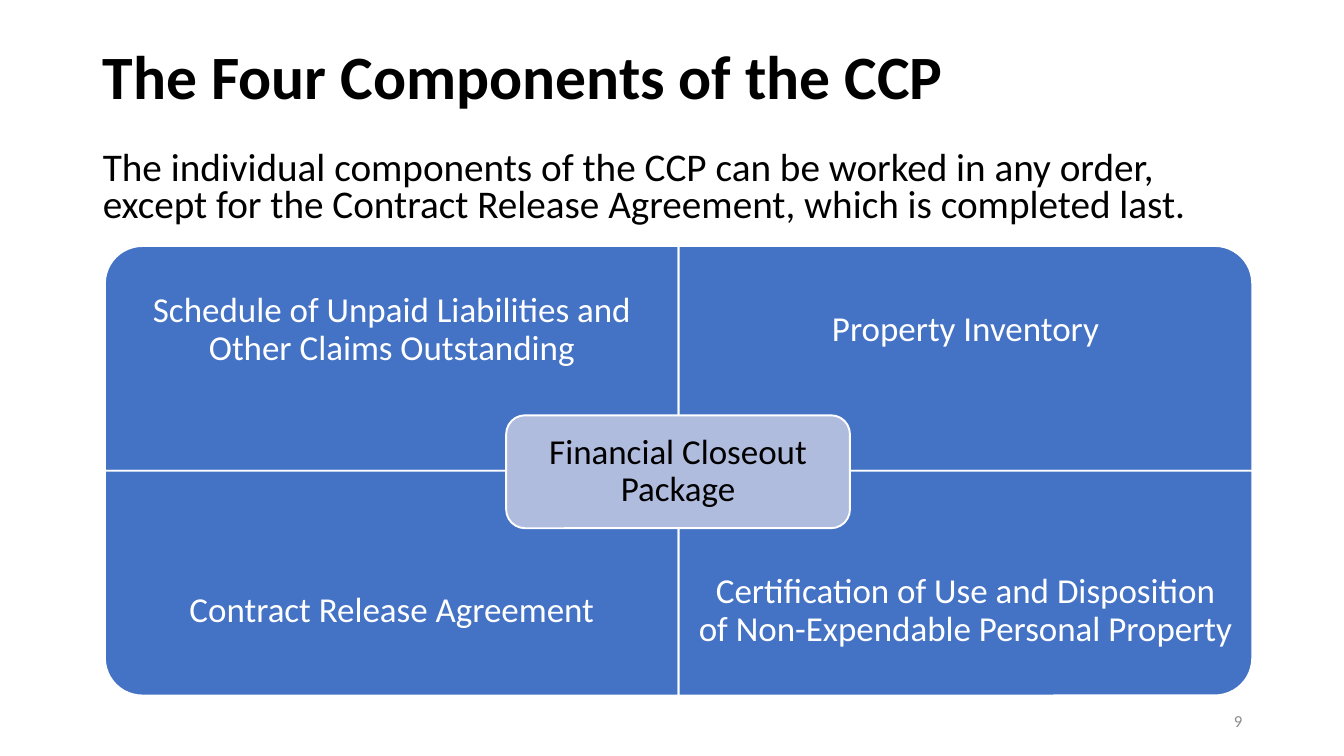
from pptx import Presentation
from pptx.dml.color import RGBColor
from pptx.enum.shapes import MSO_SHAPE
from pptx.enum.text import MSO_ANCHOR, MSO_AUTO_SIZE, PP_ALIGN
from pptx.util import Inches, Pt

LEFT, CENTER, RIGHT = PP_ALIGN.LEFT, PP_ALIGN.CENTER, PP_ALIGN.RIGHT
TOP, MIDDLE = MSO_ANCHOR.TOP, MSO_ANCHOR.MIDDLE
ONE_ROUND_CORNER = MSO_SHAPE.ROUND_1_RECTANGLE
ROUNDED = MSO_SHAPE.ROUNDED_RECTANGLE
NO_AUTOFIT = MSO_AUTO_SIZE.NONE

BLUE, LAVENDER = "4472C4", "B0BCDE"
WHITE, BLACK, GRAY = "FFFFFF", "000000", "8C8C8C"


def write(box, text, size, color, align=LEFT, anchor=MIDDLE, spacing=0.9,
          inset=None, bold=False):
    """Fill a box with one formatted paragraph; inset is in inches."""
    frame = box.text_frame
    frame.word_wrap = True
    frame.auto_size = NO_AUTOFIT
    frame.vertical_anchor = anchor
    if inset is not None:
        frame.margin_left = frame.margin_right = Inches(inset)
        frame.margin_top = frame.margin_bottom = Inches(inset)
    para = frame.paragraphs[0]
    para.alignment = align
    para.line_spacing = spacing
    para.space_before = Pt(0)
    span = para.add_run()
    span.text = text
    span.font.name = "Calibri"
    span.font.size = Pt(size)
    span.font.bold = bold
    span.font.color.rgb = RGBColor.from_string(color)
    return para


def add_panel(kind, left, top, width, height, fill):
    panel = page.shapes.add_shape(
        kind, Inches(left), Inches(top), Inches(width), Inches(height))
    panel.shadow.inherit = False
    panel.fill.solid()
    panel.fill.fore_color.rgb = RGBColor.from_string(fill)
    panel.line.color.rgb = RGBColor.from_string(WHITE)
    panel.line.width = Pt(1.35)
    return panel


deck = Presentation()
deck.slide_width, deck.slide_height = Inches(13.33), Inches(7.5)
page = deck.slides.add_slide(deck.slide_layouts[1])

# Title and introduction
title, intro = page.placeholders
for box, top, height in ((title, 0.4, 0.78), (intro, 1.45, 0.93)):
    box.left, box.top = Inches(0.92), Inches(top)
    box.width, box.height = Inches(11.5), Inches(height)
write(title, "The Four Components of the CCP", 44, BLACK, bold=True)
intro_para = write(
    intro,
    "The individual components of the CCP can be worked in any order, "
    "except for the Contract Release Agreement, which is completed last.",
    28, BLACK, anchor=TOP, spacing=0.8)
intro_para.space_before = Pt(10)
intro_props = intro_para._p.get_or_add_pPr()
intro_props.set("marL", "0")
intro_props.set("indent", "0")
intro_props.insert_element_before(
    intro_props.makeelement(
        "{http://schemas.openxmlformats.org/drawingml/2006/main}buNone", {}),
    "a:tabLst", "a:defRPr", "a:extLst")

# Four quadrants, each with its rounded corner turned outwards
GRID_LEFT, GRID_TOP = 1.04, 2.44
CELL_WIDTH, CELL_HEIGHT, LABEL_HEIGHT = 5.69, 2.23, 1.67
components = (
    ("Schedule of Unpaid Liabilities and Other Claims Outstanding", 0, 0, 270),
    ("Property Inventory", 0, 1, 0),
    ("Contract Release Agreement", 1, 0, 180),
    ("Certification of Use and Disposition of Non-Expendable Personal Property",
     1, 1, 90),
)
for name, row, column, rotation in components:
    left = GRID_LEFT + column * CELL_WIDTH
    top = GRID_TOP + row * CELL_HEIGHT
    width, height = CELL_WIDTH, CELL_HEIGHT
    if rotation in (90, 270):  # a quarter turn swaps the sides
        width, height = height, width
    quadrant = add_panel(
        ONE_ROUND_CORNER, left + (CELL_WIDTH - width) / 2,
        top + (CELL_HEIGHT - height) / 2, width, height, BLUE)
    quadrant.rotation = rotation
    label_top = top + row * (CELL_HEIGHT - LABEL_HEIGHT)
    label = page.shapes.add_textbox(
        Inches(left), Inches(label_top), Inches(CELL_WIDTH), Inches(LABEL_HEIGHT))
    write(label, name, 25, WHITE, CENTER, inset=0.19)

# Centre
package = add_panel(ROUNDED, 5.02, 4.12, 3.41, 1.12, LAVENDER)
write(package, "Financial Closeout Package", 25, BLACK, CENTER, inset=0.15)

# Page number
number = page.shapes.add_textbox(Inches(9.42), Inches(6.95), Inches(3), Inches(0.4))
write(number, "9", 12, GRAY, RIGHT, spacing=1.0)

deck.save("out.pptx")
